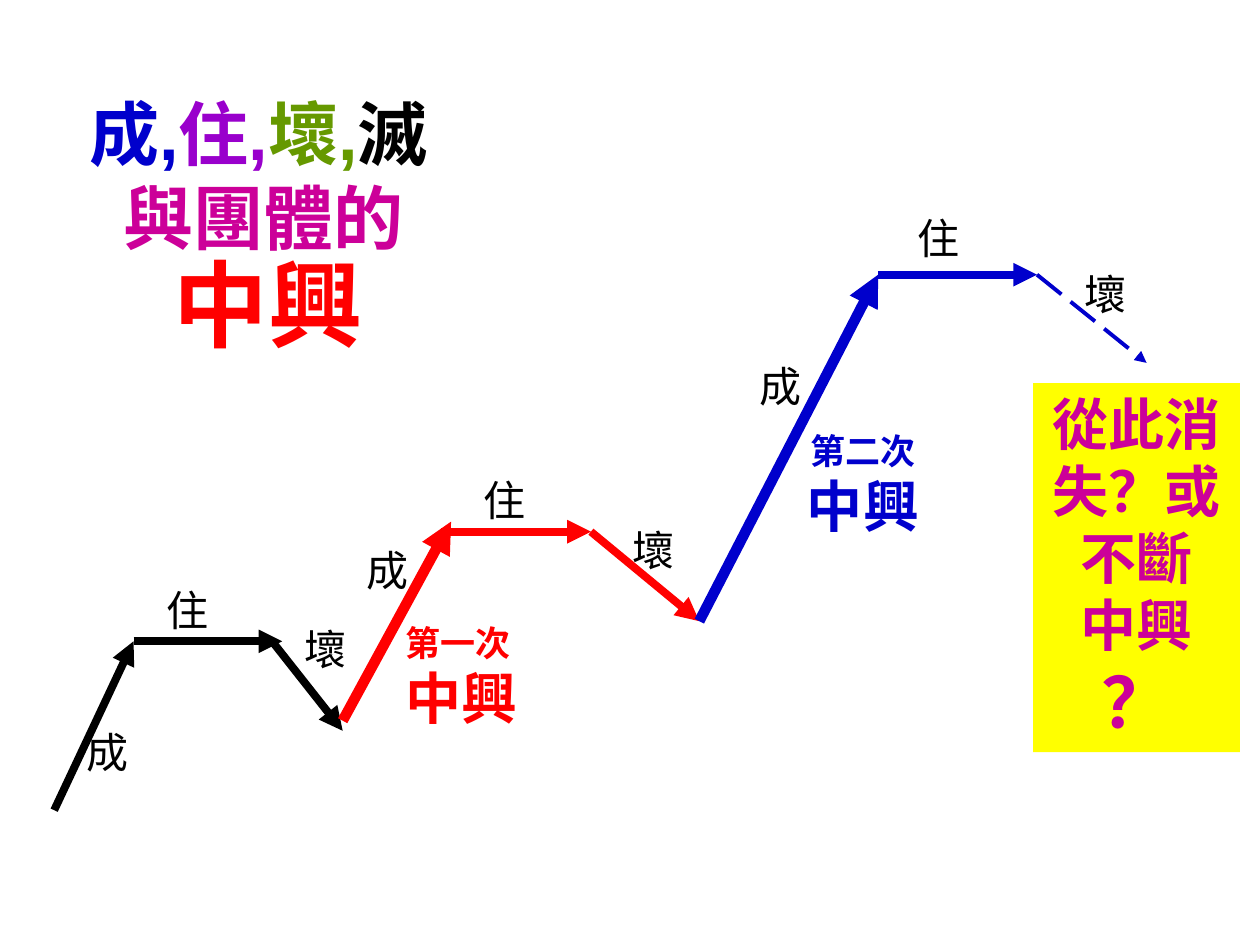
from lxml import etree
from pptx import Presentation
from pptx.dml.color import RGBColor
from pptx.enum.dml import MSO_LINE
from pptx.enum.shapes import MSO_CONNECTOR, MSO_SHAPE
from pptx.enum.text import MSO_ANCHOR, MSO_AUTO_SIZE, PP_ALIGN
from pptx.oxml.ns import qn
from pptx.util import Inches, Pt

STRAIGHT = MSO_CONNECTOR.STRAIGHT
LONG_DASH = MSO_LINE.LONG_DASH
RECTANGLE = MSO_SHAPE.RECTANGLE
TOP = MSO_ANCHOR.TOP
NO_AUTOFIT = MSO_AUTO_SIZE.NONE
LEFT, CENTER = PP_ALIGN.LEFT, PP_ALIGN.CENTER

BLACK = RGBColor(0x00, 0x00, 0x00)
BLUE = RGBColor(0x00, 0x00, 0xCC)
PURPLE = RGBColor(0x99, 0x00, 0xCC)
GREEN = RGBColor(0x66, 0x99, 0x00)
MAGENTA = RGBColor(0xCC, 0x00, 0x99)
RED = RGBColor(0xFF, 0x00, 0x00)
YELLOW = RGBColor(0xFF, 0xFF, 0x00)
FONT = "Arial"
TITLE_ONLY = 5

# Each paragraph is a list of (text, size, colour) runs.
TITLE = [
    [("成,", 40, BLUE), ("住,", 40, PURPLE), ("壞,", 40, GREEN), ("滅", 40, BLACK)],
    [("與團體的", 40, MAGENTA)],
    [("中興", 54, RED)],
]
TITLE_INDENTS = [0, 0.27, 0.67]
TITLE_LINE_SPACING = [1.0, 1.0, 0.9]

# Each cycle rises, holds and falls: (start, end, width) per arrow.
CYCLES = [
    (BLACK, [((0.43, 6.43), (1.06, 5.09), 4.5),
             ((1.06, 5.09), (2.24, 5.09), 4.5),
             ((2.16, 5.09), (2.72, 5.80), 4.5)]),
    (RED, [((2.72, 5.72), (3.58, 4.14), 6),
           ((3.50, 4.22), (4.69, 4.22), 4.5),
           ((4.69, 4.22), (5.55, 4.93), 4.5)]),
    (BLUE, [((5.55, 4.93), (6.97, 2.18), 6),
            ((6.97, 2.18), (8.23, 2.18), 4.5),
            ((8.23, 2.18), (9.10, 2.88), 2.25)]),
]
STAGES = [("成", 0.55), ("住", 0.63), ("壞", 0.79)]
STAGE_POSITIONS = [
    [(0.59, 5.72), (1.22, 4.59), (2.32, 4.90)],
    [(2.81, 4.27), (3.74, 3.72), (4.92, 4.11)],
    [(5.93, 2.81), (7.18, 1.64), (8.51, 2.08)],
]
REVIVALS = [
    ((3.12, 4.88, 1.18, 0.98), LEFT,
     [[("第一次", 20, RED)], [("中興", 32, RED)]]),
    ((6.26, 3.36, 1.18, 0.97), CENTER,
     [[("第二次", 20, BLUE), ("中興", 32, BLUE)]]),
]
QUESTION_BOX = (8.2, 3.04, 1.64, 2.93)
QUESTION = [
    [("從此消失？或不斷", 32, MAGENTA)],
    [("中興", 32, MAGENTA)],
    [("？", 40, MAGENTA)],
]


def write_text(shape, paragraphs, alignment=LEFT, bold=True):
    frame = shape.text_frame
    frame.word_wrap = True
    frame.auto_size = NO_AUTOFIT
    frame.vertical_anchor = TOP
    for index, runs in enumerate(paragraphs):
        paragraph = frame.add_paragraph() if index else frame.paragraphs[0]
        paragraph.alignment = alignment
        for text, size, color in runs:
            run = paragraph.add_run()
            run.text = text
            run.font.name = FONT
            run.font.size = Pt(size)
            run.font.bold = bold
            run.font.color.rgb = color


def add_label(slide, box, paragraphs, alignment=LEFT, bold=True):
    label = slide.shapes.add_textbox(*map(Inches, box))
    write_text(label, paragraphs, alignment, bold)


def add_arrow(slide, start, end, color, width):
    arrow = slide.shapes.add_connector(STRAIGHT, *map(Inches, start + end))
    arrow.line.color.rgb = color
    arrow.line.width = Pt(width)
    properties = arrow.line._get_or_add_ln()
    etree.SubElement(properties, qn("a:tailEnd"), type="triangle")
    etree.SubElement(arrow._element.spPr, qn("a:effectLst"))
    return arrow


def add_title(slide):
    title = slide.shapes.title
    title.left, title.top, title.width, title.height = map(Inches, (0.61, 0.67, 4.2, 2.3))
    write_text(title, TITLE)
    for paragraph, indent, spacing in zip(
            title.text_frame.paragraphs, TITLE_INDENTS, TITLE_LINE_SPACING):
        paragraph.line_spacing = spacing
        paragraph._p.get_or_add_pPr().set("marL", str(Inches(indent)))


def main():
    presentation = Presentation()
    presentation.slide_width, presentation.slide_height = Inches(10), Inches(7.5)
    slide = presentation.slides.add_slide(presentation.slide_layouts[TITLE_ONLY])
    add_title(slide)

    for color, arrows in CYCLES:
        for start, end, width in arrows:
            arrow = add_arrow(slide, start, end, color, width)
    arrow.line.dash_style = LONG_DASH  # the last decline is still open

    for box, alignment, paragraphs in REVIVALS:
        add_label(slide, box, paragraphs, alignment)
    for positions in STAGE_POSITIONS:
        for (text, width), (left, top) in zip(STAGES, positions):
            add_label(slide, (left, top, width, 0.5), [[(text, 24, BLACK)]], bold=False)

    question = slide.shapes.add_shape(RECTANGLE, *map(Inches, QUESTION_BOX))
    question.shadow.inherit = False
    question.fill.solid()
    question.fill.fore_color.rgb = YELLOW
    question.line.fill.background()
    write_text(question, QUESTION, CENTER)

    presentation.save("out.pptx")


if __name__ == "__main__":
    main()
